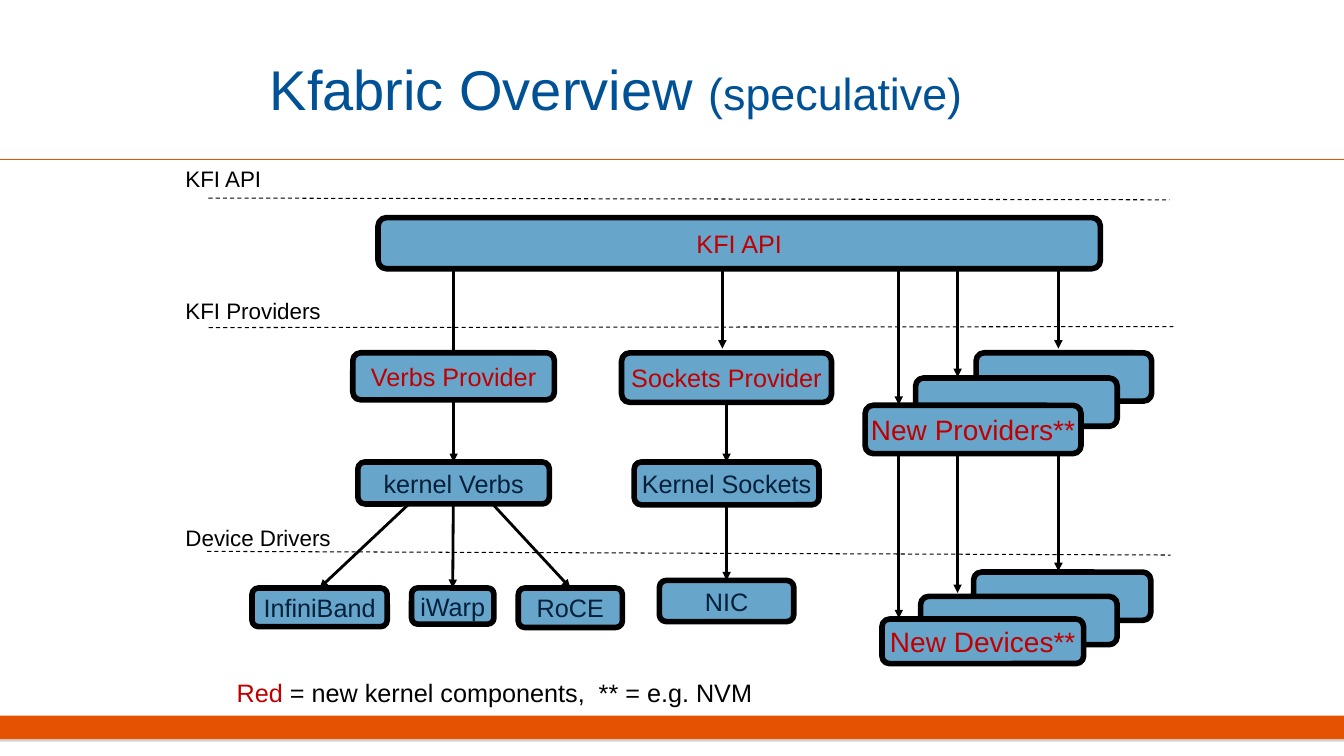
from dataclasses import dataclass
from typing import Any

from lxml import etree
from pptx import Presentation
from pptx.dml.color import RGBColor
from pptx.enum.dml import MSO_LINE
from pptx.enum.shapes import MSO_CONNECTOR, MSO_SHAPE
from pptx.enum.text import MSO_ANCHOR, MSO_AUTO_SIZE, PP_ALIGN
from pptx.oxml.ns import qn
from pptx.util import Inches, Length, Pt

RECTANGLE = MSO_SHAPE.RECTANGLE
ROUNDED = MSO_SHAPE.ROUNDED_RECTANGLE
CALLOUT = MSO_SHAPE.LINE_CALLOUT_1_NO_BORDER
STRAIGHT = MSO_CONNECTOR.STRAIGHT
DASH = MSO_LINE.DASH
MIDDLE = MSO_ANCHOR.MIDDLE
FIXED = MSO_AUTO_SIZE.NONE
CENTER, LEFT = PP_ALIGN.CENTER, PP_ALIGN.LEFT
TOP_SIDE, BOTTOM_SIDE = 0, 2
TITLE_ONLY = 5
COLUMNS, ROWS = 160, 90


@dataclass(frozen=True)
class Theme:
    font: str = "Arial"
    title: str = "005195"
    accent: str = "E55302"
    box: str = "67A5CB"
    existing: str = "02203A"
    new: str = "C00000"
    ink: str = "000000"
    shadow: str = "808080"
    title_size: int = 40
    subtitle_size: int = 32
    stack_size: int = 20
    box_size: int = 18
    layer_size: int = 16


@dataclass(frozen=True)
class Area:
    col: float
    row: float
    cols: float
    rows: float


@dataclass(frozen=True)
class Box:
    area: Area
    label: str = ""
    new: bool = False
    size: int = 18


@dataclass(frozen=True)
class Layer:
    """A layer label; leader holds the y, x, y, x shares of its dashed line."""
    area: Area
    label: str
    leader: tuple[float, float, float, float]


@dataclass(frozen=True)
class Run:
    text: str
    size: int
    color: str


THEME = Theme()

LAYERS = [
    Layer(Area(20.9, 20, 16.3, 2.6), "KFI API", (1.38, 0.24, 1.46, 7.26)),
    Layer(Area(20.9, 36, 20.8, 2), "KFI Providers", (1.5, 0.19, 1.44, 5.71)),
    Layer(Area(20.9, 63, 22.1, 2), "Device Drivers", (1.32, 0.17, 1.54, 5.36)),
]

BOXES = [
    Box(Area(45, 25.9, 86, 6.1), "KFI API", True),
    Box(Area(42, 42, 24, 5.6), "Verbs Provider", True),
    Box(Area(74, 42, 25, 5.9), "Sockets Provider", True),
    Box(Area(42.6, 55, 22.8, 5), "kernel Verbs"),
    Box(Area(75.5, 55, 22, 5.1), "Kernel Sockets"),
    Box(Area(30, 70, 16.1, 4.6), "InfiniBand"),
    Box(Area(49, 70, 9.8, 4.3), "iWarp"),
    Box(Area(61.7, 70, 12.4, 4.7), "RoCE"),
    Box(Area(78.5, 69.1, 16, 4.9), "NIC"),
    Box(Area(116.2, 42, 20.9, 5.75)),
    Box(Area(109, 45, 24, 5.75)),
    Box(Area(103, 48.25, 25.7, 5.75), "New Providers**", True, THEME.stack_size),
    Box(Area(115.9, 68.1, 21.1, 5.75)),
    Box(Area(109.6, 71, 23.4, 5.75)),
    Box(Area(105, 73.7, 24, 5.3), "New Devices**", True, THEME.stack_size),
]

# upper box, side it leaves from, lower box
JOINS = [
    ("Verbs Provider", BOTTOM_SIDE, "kernel Verbs"),
    ("kernel Verbs", TOP_SIDE, "InfiniBand"),
    ("kernel Verbs", TOP_SIDE, "iWarp"),
    ("kernel Verbs", TOP_SIDE, "RoCE"),
    ("Sockets Provider", BOTTOM_SIDE, "Kernel Sockets"),
    ("Kernel Sockets", BOTTOM_SIDE, "NIC"),
]

# column, first row, last row
DROPS = [
    (54, 32, 44), (86, 32, 41.5),
    (107, 32, 48.2), (114, 32, 44.9), (126, 32, 41.5),
    (107, 54, 73.6), (114, 54, 70.6), (126, 54, 68),
]

deck = Presentation()
deck.slide_width, deck.slide_height = Inches(13.33), Inches(7.5)
slide = deck.slides.add_slide(deck.slide_layouts[TITLE_ONLY])


def across(cols: float) -> Length:
    return Length(round(deck.slide_width * cols / COLUMNS))


def down(rows: float) -> Length:
    return Length(round(deck.slide_height * rows / ROWS))


def place(area: Area) -> tuple[Length, Length, Length, Length]:
    return across(area.col), down(area.row), across(area.cols), down(area.rows)


def apply(target: Any, formats: dict[str, Any]) -> None:
    for name, value in formats.items():
        setattr(target, name, value)


def write(shape: Any, runs: list[Run], align: Any, **frame: Any) -> None:
    apply(shape.text_frame, frame)
    paragraph = shape.text_frame.paragraphs[0]
    paragraph.alignment = align
    for piece in runs:
        run = paragraph.add_run()
        run.text = piece.text
        apply(run.font, {"name": THEME.font, "size": Pt(piece.size), "bold": False})
        run.font.color.rgb = RGBColor.from_string(piece.color)


def stroke(shape: Any, color: str, width: float) -> None:
    shape.line.color.rgb = RGBColor.from_string(color)
    shape.line.width = Pt(width)


def add_filled(kind: Any, area: Area, color: str) -> Any:
    shape = slide.shapes.add_shape(kind, *place(area))
    shape.shadow.inherit = False
    shape.fill.solid()
    shape.fill.fore_color.rgb = RGBColor.from_string(color)
    return shape


def add_line(start: tuple[float, float], end: tuple[float, float],
             color: str, width: float) -> Any:
    line = slide.shapes.add_connector(STRAIGHT, across(start[0]), down(start[1]),
                                      across(end[0]), down(end[1]))
    stroke(line, color, width)
    etree.SubElement(line._element.spPr, qn("a:effectLst"))
    return line


def add_arrow(start: tuple[float, float], end: tuple[float, float]) -> Any:
    """Add an arrow that lies behind every box."""
    arrow = add_line(start, end, THEME.ink, 2)
    etree.SubElement(arrow.line._get_or_add_ln(), qn("a:tailEnd"), type="triangle")
    slide.shapes._spTree.insert(2, arrow._element)
    return arrow


def add_box(box: Box) -> Any:
    shape = add_filled(ROUNDED, box.area, THEME.box)
    stroke(shape, THEME.ink, 4)
    if box.label:
        color = THEME.new if box.new else THEME.existing
        write(shape, [Run(box.label, box.size, color)], CENTER,
              word_wrap=False, vertical_anchor=MIDDLE)
    return shape


def add_layer(layer: Layer) -> None:
    shape = slide.shapes.add_shape(CALLOUT, *place(layer.area))
    shape.shadow.inherit = False
    shape.fill.background()
    stroke(shape, THEME.ink, 0.75)
    shape.line.dash_style = DASH
    for index, share in enumerate(layer.leader):
        shape.adjustments[index] = share
    write(shape, [Run(layer.label, THEME.layer_size, THEME.ink)], LEFT,
          word_wrap=True, vertical_anchor=MIDDLE)


def add_footer_bar() -> None:
    bar = add_filled(RECTANGLE, Area(0, 85.2, COLUMNS, 2.8), THEME.accent)
    bar.line.fill.background()
    effects = bar._element.spPr.find(qn("a:effectLst"))
    shadow = etree.SubElement(effects, qn("a:outerShdw"), dist=str(Pt(1.8)), dir="5400000")
    tint = etree.SubElement(shadow, qn("a:srgbClr"), val=THEME.shadow)
    etree.SubElement(tint, qn("a:alpha"), val="35000")


add_footer_bar()
add_line((0, 19), (COLUMNS, 19), THEME.accent, 1)

heading = slide.shapes.title
apply(heading, dict(zip(("left", "top", "width", "height"), place(Area(8, 3, 130.7, 15)))))
write(heading, [Run("Kfabric Overview ", THEME.title_size, THEME.title),
                Run("(speculative)", THEME.subtitle_size, THEME.title)],
      CENTER, word_wrap=True, vertical_anchor=MIDDLE, auto_size=FIXED)

for layer in LAYERS:
    add_layer(layer)
components = {box.label: add_box(box) for box in BOXES}
for upper, side, lower in JOINS:
    arrow = add_arrow((0, 0), (0, 0))
    arrow.begin_connect(components[upper], side)
    arrow.end_connect(components[lower], TOP_SIDE)
for column, first, last in DROPS:
    add_arrow((column, first), (column, last))

legend = slide.shapes.add_textbox(*place(Area(27, 80, 66, 4.8)))
write(legend, [Run("Red", THEME.box_size, THEME.new),
               Run(" = new kernel components,  ** = e.g. NVM", THEME.box_size, THEME.ink)],
      LEFT, word_wrap=True)

deck.save("out.pptx")
